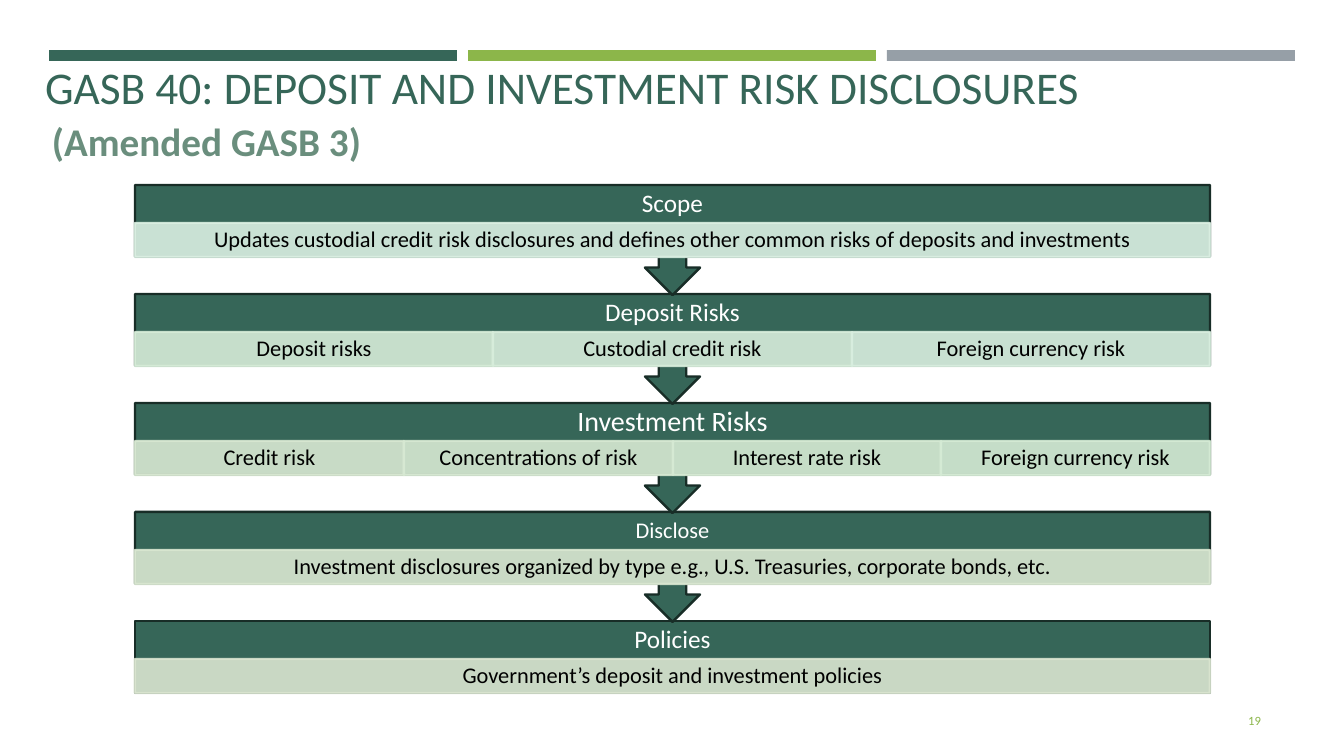
from pptx import Presentation
from pptx.dml.color import RGBColor
from pptx.enum.shapes import MSO_SHAPE
from pptx.enum.text import MSO_ANCHOR, MSO_AUTO_SIZE, PP_ALIGN
from pptx.oxml.ns import qn
from pptx.util import Emu, Pt
from lxml import etree

RECT, CALLOUT = MSO_SHAPE.RECTANGLE, MSO_SHAPE.UP_ARROW_CALLOUT
LEFT, MID, RIGHT = PP_ALIGN.LEFT, PP_ALIGN.CENTER, PP_ALIGN.RIGHT
TOP, CENTER, BOTTOM = MSO_ANCHOR.TOP, MSO_ANCHOR.MIDDLE, MSO_ANCHOR.BOTTOM

GREEN = RGBColor(0x36, 0x66, 0x58)
DARK = RGBColor(0x18, 0x2D, 0x27)
LIME = RGBColor(0x8C, 0xB6, 0x4A)
GRAY = RGBColor(0x96, 0x9F, 0xA7)
SAGE = RGBColor(0x6A, 0x8E, 0x7D)
WHITE = RGBColor(0xFF, 0xFF, 0xFF)
BLACK = RGBColor(0x00, 0x00, 0x00)
MINT = RGBColor(0xDA, 0xEF, 0xE2)
TINT_A = RGBColor(0xD6, 0xEC, 0xD8)
TINT_B = RGBColor(0xD7, 0xED, 0xDB)
TINT_C = RGBColor(0xD8, 0xEE, 0xDF)
TINT_D = RGBColor(0xD8, 0xE8, 0xD2)
TINT_E = RGBColor(0xD7, 0xE9, 0xD3)
TINT_F = RGBColor(0xD6, 0xEA, 0xD4)
TINT_G = RGBColor(0xD5, 0xEB, 0xD5)
TINT_H = RGBColor(0xD9, 0xE7, 0xD1)
TINT_I = RGBColor(0xDA, 0xE5, 0xD0)

# Layout of the flow, in px
FLOW_X, FLOW_Y, FLOW_W = 135, 185, 1075
PITCH, BODY_H, HEAD_H, CELL_H = 109, 72, 38, 34

# Heading, its size, and the cells with their tints
STEPS = [
    ("Scope", 18, [("Updates custodial credit risk disclosures and defines "
                    "other common risks of deposits and investments", MINT)]),
    ("Deposit Risks", 18, [("Deposit risks", TINT_A),
                           ("Custodial credit risk", TINT_B),
                           ("Foreign currency risk", TINT_C)]),
    ("Investment Risks", 20, [("Credit risk", TINT_D),
                              ("Concentrations of risk", TINT_E),
                              ("Interest rate risk", TINT_F),
                              ("Foreign currency risk", TINT_G)]),
    ("Disclose", 16, [("Investment disclosures organized by type e.g., "
                       "U.S. Treasuries, corporate bonds, etc.", TINT_H)]),
    ("Policies", 18, [("Government’s deposit and investment policies",
                       TINT_I)]),
]


def px(n):
    return Emu(round(n * 914400 / 100.8))


def set_all(item, values):
    for name, value in values.items():
        setattr(item, name, value)


def write(shape, text, size, color, align=MID, anchor=CENTER,
          pad=(10, 5), bold=False, space=0.9):
    side, edge = map(px, pad)
    frame = shape.text_frame
    set_all(frame, {"text": text, "word_wrap": True,
                    "auto_size": MSO_AUTO_SIZE.NONE,
                    "vertical_anchor": anchor,
                    "margin_left": side, "margin_right": side,
                    "margin_top": edge, "margin_bottom": edge})
    para = frame.paragraphs[0]
    set_all(para, {"alignment": align, "line_spacing": space})
    font = para.runs[0].font
    set_all(font, {"name": "Calibri", "size": Pt(size), "bold": bold})
    font.color.rgb = color


def add_label(slide, box, text, size, color, **style):
    label = slide.shapes.add_textbox(*map(px, box))
    write(label, text, size, color, **style)


def add_block(slide, kind, box, fill, line=None):
    block = slide.shapes.add_shape(kind, *map(px, box))
    block.shadow.inherit = False
    block.fill.solid()
    block.fill.fore_color.rgb = fill
    if line is None:
        block.line.fill.background()
    else:
        block.line.color.rgb = line
        block.line.width = Pt(1.75)
    return block


def add_cell(slide, box, text, tint):
    cell = add_block(slide, RECT, box, tint, tint)
    # Fill and line are 90% opaque
    for color in cell._element.spPr.iter(qn("a:srgbClr")):
        etree.SubElement(color, qn("a:alpha")).set("val", "90000")
    write(cell, text, 16, BLACK, pad=(12, 2))


def add_step(slide, top, step, last):
    head, size, cells = step
    if last:
        add_block(slide, RECT, (FLOW_X, top, FLOW_W, BODY_H), GREEN, DARK)
    else:
        body = add_block(slide, CALLOUT, (FLOW_X, top, FLOW_W, PITCH + 1),
                         GREEN, DARK)
        body.rotation = 180
    add_label(slide, (FLOW_X, top, FLOW_W, HEAD_H), head, size, WHITE,
              pad=(1, 1))
    wide = FLOW_W / len(cells)
    for i, (text, tint) in enumerate(cells):
        x, end = round(i * wide), round((i + 1) * wide)
        add_cell(slide, (FLOW_X + x, top + HEAD_H, end - x, CELL_H),
                 text, tint)


def add_title(slide, box, text):
    title = slide.shapes.title
    set_all(title, dict(zip(("left", "top", "width", "height"),
                            map(px, box))))
    write(title, text, 32.4, GREEN, align=LEFT, anchor=BOTTOM)


def main():
    deck = Presentation()
    set_all(deck, {"slide_width": px(1344), "slide_height": px(756)})
    slide = deck.slides.add_slide(deck.slide_layouts[5])

    # Top bars
    for i, color in enumerate((GREEN, LIME, GRAY)):
        add_block(slide, RECT, (49 + 419 * i, 50, 408, 11), color)

    # Title and subtitle
    add_title(slide, (35, 79, 1228, 40),
              "GASB 40: DEPOSIT AND INVESTMENT RISK DISCLOSURES")
    add_label(slide, (42, 112, 1220, 37), "(Amended GASB 3)", 28, SAGE,
              align=LEFT, anchor=TOP, bold=True, space=1.0)

    # Flow, from the bottom up so each arrow tip lies over the next step
    final = len(STEPS) - 1
    for i in range(final, -1, -1):
        add_step(slide, FLOW_Y + PITCH * i, STEPS[i], i == final)

    # Slide number
    add_label(slide, (969, 701, 302, 40), "19", 9, LIME, align=RIGHT)

    deck.save("out.pptx")


if __name__ == "__main__":
    main()
